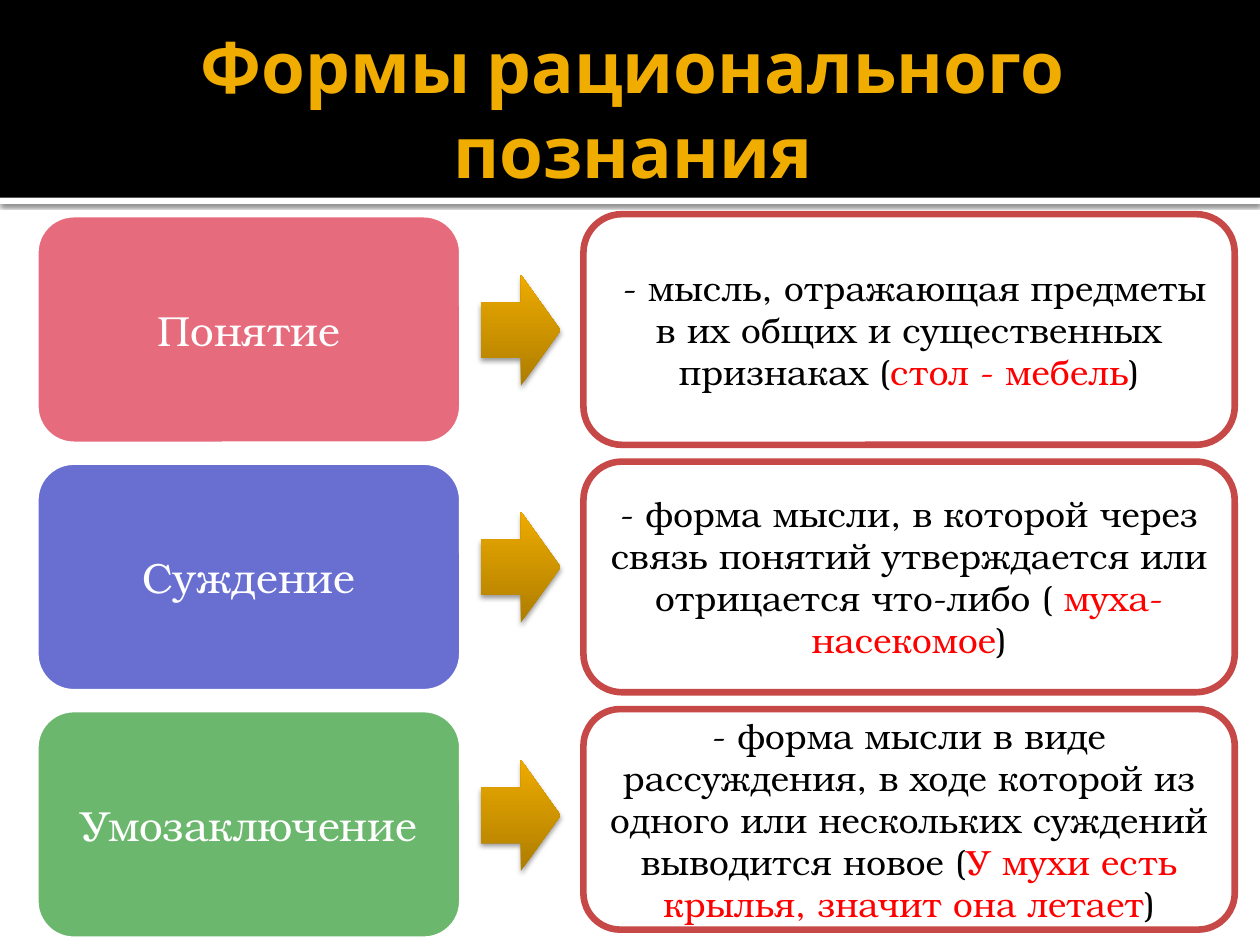
from dataclasses import dataclass

from lxml import etree
from pptx import Presentation
from pptx.dml.color import RGBColor
from pptx.enum.shapes import MSO_SHAPE
from pptx.enum.text import MSO_ANCHOR, PP_ALIGN
from pptx.oxml.ns import qn
from pptx.shapes.autoshape import Shape
from pptx.slide import Slide
from pptx.util import Pt

RECTANGLE = MSO_SHAPE.RECTANGLE
ROUNDED_RECTANGLE = MSO_SHAPE.ROUNDED_RECTANGLE
RIGHT_ARROW = MSO_SHAPE.RIGHT_ARROW
MIDDLE = MSO_ANCHOR.MIDDLE
CENTER = PP_ALIGN.CENTER

BLACK = RGBColor(0x00, 0x00, 0x00)
WHITE = RGBColor(0xFF, 0xFF, 0xFF)
RED = RGBColor(0xFF, 0x00, 0x00)
AMBER = RGBColor(0xF0, 0xAD, 0x00)
PINK = RGBColor(0xE6, 0x6C, 0x7D)
BLUE = RGBColor(0x69, 0x6F, 0xD1)
GREEN = RGBColor(0x6B, 0xB7, 0x6D)
BORDER_RED = RGBColor(0xC6, 0x48, 0x47)
ARROW_DARK = RGBColor(0xAE, 0x7D, 0x00)
ARROW_LIGHT = RGBColor(0xEE, 0xAB, 0x00)

TITLE_FONT = "Cabin"
BODY_FONT = "TeX Gyre Bonum"
BORDER_WIDTH = 3.78
FIRST_ROW_TOP = 122.4
ROW_STEP = 141.4
ROW_HEIGHT = 131.8


@dataclass(frozen=True)
class Box:
    left: float
    top: float
    width: float
    height: float


@dataclass(frozen=True)
class TextPart:
    text: str
    color: RGBColor


@dataclass(frozen=True)
class KnowledgeForm:
    name: str
    color: RGBColor
    definition: str
    example: str
    arrow_top: float
    definition_height: float = ROW_HEIGHT


FORMS = (
    KnowledgeForm(
        "Понятие", PINK,
        " - мысль, отражающая предметы в их общих и существенных признаках (",
        "стол - мебель", 157,
    ),
    KnowledgeForm(
        "Суждение", BLUE,
        "- форма мысли, в которой через связь понятий утверждается "
        "или отрицается что-либо ( ",
        "муха-насекомое", 292.3,
    ),
    KnowledgeForm(
        "Умозаключение", GREEN,
        "- форма мысли в виде рассуждения, в ходе которой из одного "
        "или нескольких суждений выводится новое (",
        "У мухи есть крылья, значит она летает", 434.2, 126,
    ),
)


def add_shape(slide: Slide, kind: MSO_SHAPE, box: Box) -> Shape:
    shape = slide.shapes.add_shape(
        kind, Pt(box.left), Pt(box.top), Pt(box.width), Pt(box.height)
    )
    shape.shadow.inherit = False
    shape.line.fill.background()
    return shape


def add_filled_shape(slide: Slide, kind: MSO_SHAPE, box: Box, color: RGBColor) -> Shape:
    shape = add_shape(slide, kind, box)
    shape.fill.solid()
    shape.fill.fore_color.rgb = color
    return shape


def add_shadow(shape: Shape, blur: float, distance: float, opacity: int) -> None:
    effects = shape._element.spPr.find(qn("a:effectLst"))
    shadow = etree.SubElement(
        effects, qn("a:outerShdw"), blurRad=str(Pt(blur)), dist=str(Pt(distance)),
        dir="5400000", rotWithShape="0",
    )
    color = etree.SubElement(shadow, qn("a:srgbClr"), val=str(BLACK))
    etree.SubElement(color, qn("a:alpha"), val=str(opacity * 1000))


def write_text(shape: Shape, parts: tuple[TextPart, ...], font_name: str,
               size: float, bold: bool = False) -> None:
    text_frame = shape.text_frame
    text_frame.word_wrap = True
    text_frame.vertical_anchor = MIDDLE
    paragraph = text_frame.paragraphs[0]
    paragraph.alignment = CENTER
    for part in parts:
        run = paragraph.add_run()
        run.text = part.text
        run.font.name = font_name
        run.font.size = Pt(size)
        run.font.bold = bold
        run.font.color.rgb = part.color


def add_card(slide: Slide, box: Box, fill: RGBColor, border: RGBColor,
             parts: tuple[TextPart, ...], size: float) -> None:
    card = add_filled_shape(slide, ROUNDED_RECTANGLE, box, fill)
    card.line.color.rgb = border
    card.line.width = Pt(BORDER_WIDTH)
    write_text(card, parts, BODY_FONT, size)


def add_arrow(slide: Slide, top: float) -> None:
    arrow = add_shape(slide, RIGHT_ARROW, Box(275, top, 45.4, 63.4))
    arrow.fill.gradient()
    arrow.fill.gradient_angle = 90
    for stop, color in zip(arrow.fill.gradient_stops, (ARROW_DARK, ARROW_LIGHT)):
        stop.color.rgb = color
    add_shadow(arrow, 3.1, 2, 38)


def add_header(slide: Slide) -> None:
    stripe = add_filled_shape(slide, RECTANGLE, Box(0, 113, 720, 3.6), WHITE)
    add_shadow(stripe, 2.5, 0.8, 60)
    add_filled_shape(slide, RECTANGLE, Box(0, 0, 720, 113), BLACK)
    title = slide.shapes.add_textbox(Pt(36), Pt(12.2), Pt(648), Pt(98.6))
    title.text_frame.margin_right = Pt(3.6)
    parts = (TextPart("Формы рационального познания", AMBER),)
    write_text(title, parts, TITLE_FONT, 40.5, bold=True)


def add_form(slide: Slide, form: KnowledgeForm, top: float) -> None:
    add_card(slide, Box(20.2, top, 244, ROW_HEIGHT), form.color, WHITE,
             (TextPart(form.name, WHITE),), 24)
    add_arrow(slide, form.arrow_top)
    definition = (
        TextPart(form.definition, BLACK),
        TextPart(form.example, RED),
        TextPart(")", BLACK),
    )
    add_card(slide, Box(333.4, top, 372.2, form.definition_height), WHITE,
             BORDER_RED, definition, 20)


def main() -> None:
    presentation = Presentation()
    presentation.slide_width = Pt(720)
    presentation.slide_height = Pt(540)
    slide = presentation.slides.add_slide(presentation.slide_layouts[6])
    add_header(slide)
    for index, form in enumerate(FORMS):
        add_form(slide, form, FIRST_ROW_TOP + index * ROW_STEP)
    presentation.save("out.pptx")


if __name__ == "__main__":
    main()
